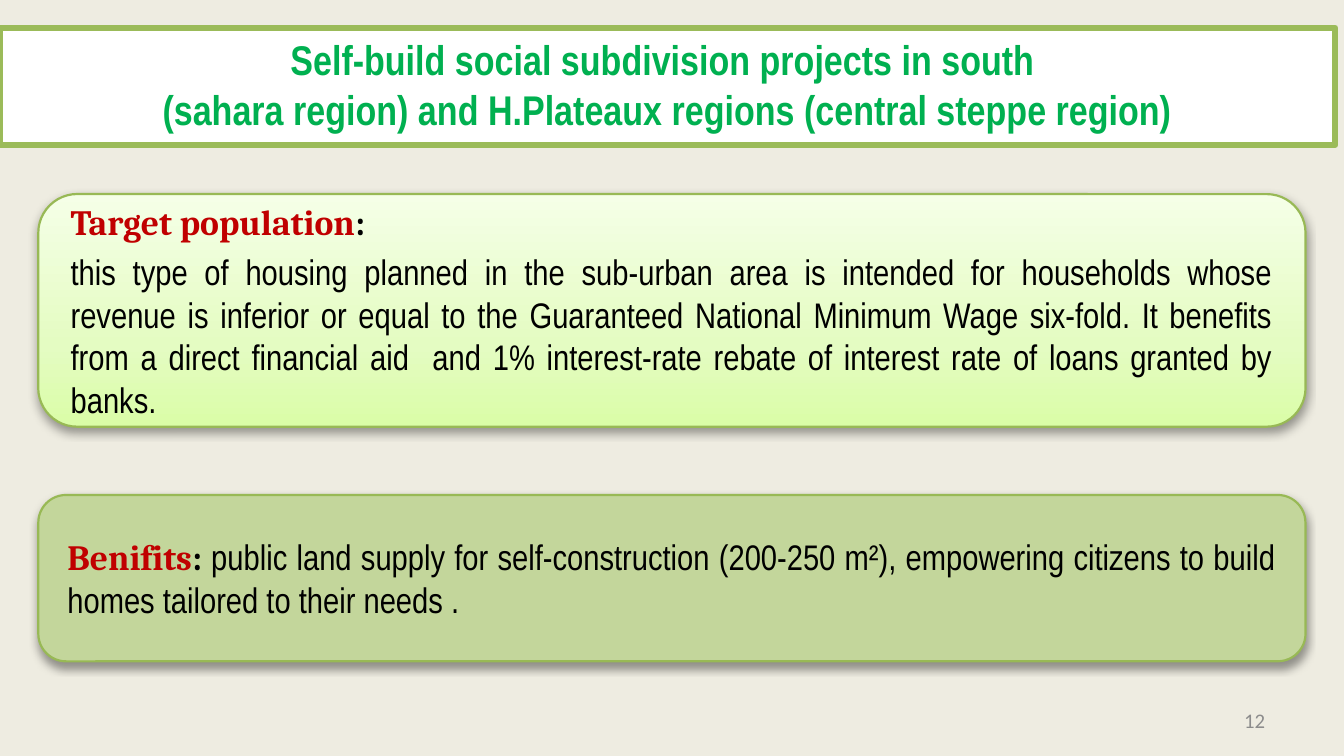
from lxml import etree
from pptx import Presentation
from pptx import util as u
from pptx.dml.color import RGBColor
from pptx.enum import shapes, text
from pptx.oxml import parse_xml
from pptx.oxml.ns import nsdecls, qn

WIDE = 6.3
HIGH = WIDE * 9 / 16
LEFT, SPAN = 0.18, 5.94
NARROW, SERIF = "Arial Narrow", "Cambria"
RED, BLACK = "C00000", "000000"


def paint(fill, color):
    fill.solid()
    fill.fore_color.rgb = RGBColor.from_string(color)


def style(run, face, size, color, bold=False):
    run.font.name = face
    run.font.size = u.Pt(size)
    run.font.bold = bold
    paint(run.font.fill, color)


deck = Presentation()
deck.slide_width, deck.slide_height = u.Inches(WIDE), u.Inches(HIGH)
slide = deck.slides.add_slide(deck.slide_layouts[5])
paint(slide.background.fill, "EEECE1")

# Title band and page number
title = slide.shapes.title
title.left, title.top = 0, u.Inches(0.13)
title.width, title.height = u.Inches(6.26), u.Inches(0.55)
paint(title.fill, "FFFFFF")
paint(title.line.fill, "9BBB59")
title.line.width = u.Pt(2)
page = slide.shapes.add_textbox(*(u.Inches(n) for n in (4.52, 3.28, 1.47, 0.19)))

labels = [
    (title, ["Self-build social subdivision projects in south ",
             "(sahara region) and H.Plateaux regions (central steppe region)"],
     text.MSO_ANCHOR.TOP, text.PP_ALIGN.CENTER, (NARROW, 14, "00B050", True)),
    (page, ["12"],
     text.MSO_ANCHOR.MIDDLE, text.PP_ALIGN.RIGHT, ("Calibri", 7, "8C8C8C")),
]
for shape, lines, anchor, align, look in labels:
    frame = shape.text_frame
    frame.word_wrap = True
    frame.auto_size = text.MSO_AUTO_SIZE.NONE
    frame.vertical_anchor = anchor
    frame.margin_left = frame.margin_right = u.Inches(0.06)
    frame.margin_top = frame.margin_bottom = u.Inches(0.03)
    para = frame.paragraphs[0]
    para.text = "\v".join(lines)
    para.alignment = align
    for run in para.runs:
        style(run, *look)
    for gap in para._p.findall(qn("a:br")):
        etree.SubElement(gap, qn("a:rPr"), sz=str(look[1] * 100))

# Rounded boxes: top, height, fill stops, paragraphs of (words, face, color, bold)
boxes = [
    (0.91, 1.09, [(0, "DAFDA7"), (35, "E4FCC2"), (100, "F5FFE7")], [
        [("Target population", SERIF, RED, True), (": ", SERIF, BLACK, True)],
        [("this type of housing planned in the sub-urban area is intended for "
          "households whose revenue is inferior or equal to the Guaranteed "
          "National Minimum Wage six-fold. It benefits from a direct financial "
          "aid  and 1% interest-rate rebate of interest rate of loans granted "
          "by banks.", NARROW, BLACK, False)],
    ]),
    (2.32, 0.78, [(0, "C3D69B")], [
        [("Benifits", SERIF, RED, True), (": ", SERIF, BLACK, True),
         ("public land supply for self-construction (200-250 m²), empowering "
          "citizens to build homes tailored to their needs .",
          NARROW, BLACK, False)],
    ]),
]
for top, height, stops, paras in boxes:
    box = slide.shapes.add_shape(
        shapes.MSO_SHAPE.ROUNDED_RECTANGLE,
        *(u.Inches(n) for n in (LEFT, top, SPAN, height)))
    paint(box.fill, stops[0][1])
    paint(box.line.fill, "98B955")
    box.line.width = u.Pt(0.75)
    props = box.element.spPr
    if len(stops) > 1:
        marks = "".join(
            f'<a:gs pos="{pos * 1000}"><a:srgbClr val="{color}"/></a:gs>'
            for pos, color in stops)
        props.replace(props.find(qn("a:solidFill")), parse_xml(
            f'<a:gradFill {nsdecls("a")} rotWithShape="1"><a:gsLst>{marks}'
            '</a:gsLst><a:lin ang="16200000" scaled="0"/></a:gradFill>'))

    box.shadow.inherit = False
    shade = etree.SubElement(
        props.find(qn("a:effectLst")), qn("a:outerShdw"),
        blurRad=str(u.Pt(3.1)), dist=str(u.Pt(1.6)), dir="5400000", rotWithShape="0")
    tint = etree.SubElement(shade, qn("a:srgbClr"), val=BLACK)
    etree.SubElement(tint, qn("a:alpha"), val="38000")

    frame = box.text_frame
    frame.word_wrap = True
    frame.vertical_anchor = text.MSO_ANCHOR.MIDDLE
    for num, parts in enumerate(paras):
        para = frame.add_paragraph() if num else frame.paragraphs[0]
        para.alignment = text.PP_ALIGN.JUSTIFY
        para.space_before = u.Pt(2.4 if num else 0)
        for words, face, color, bold in parts:
            run = para.add_run()
            run.text = words
            style(run, face, 12, color, bold)

deck.save("out.pptx")
